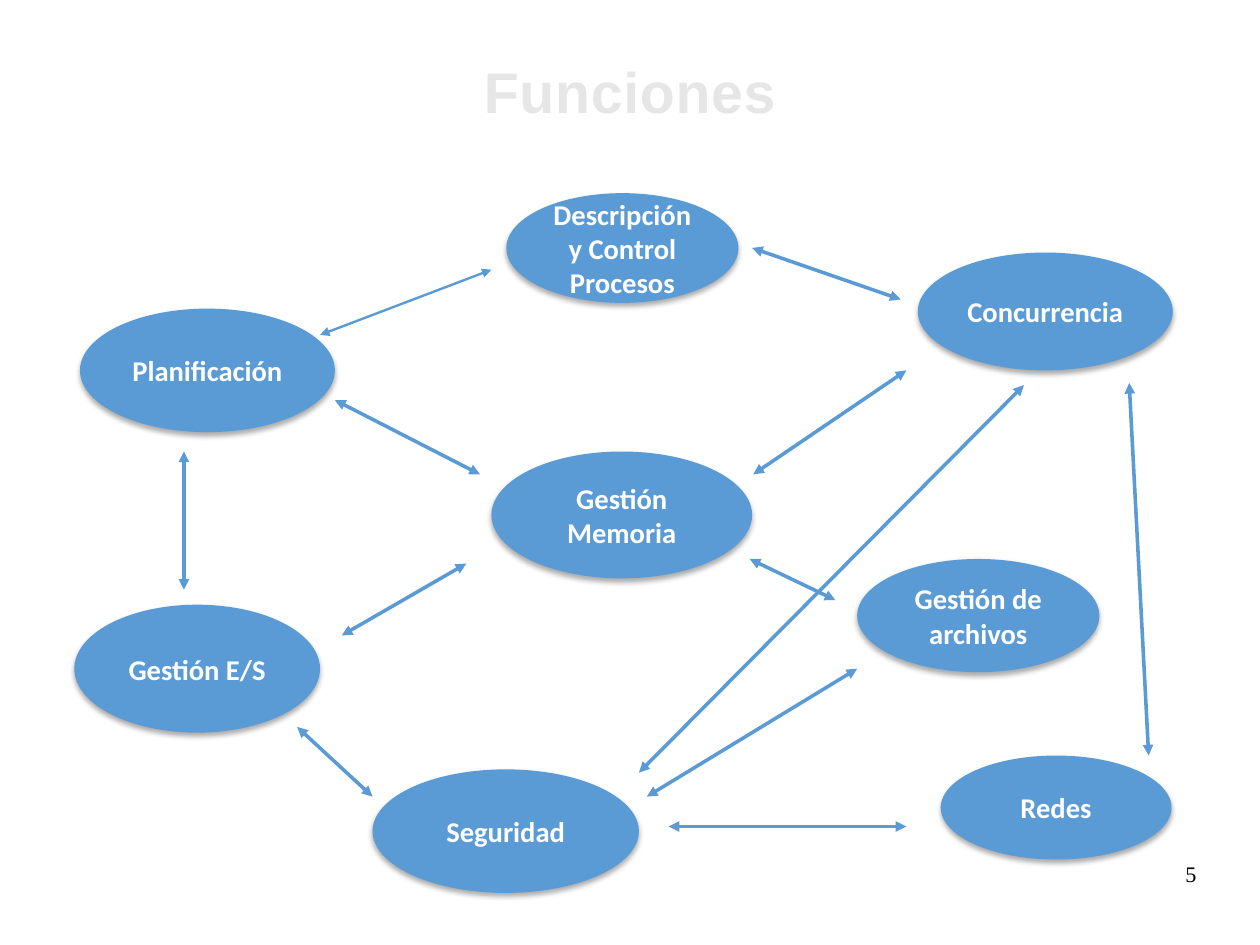
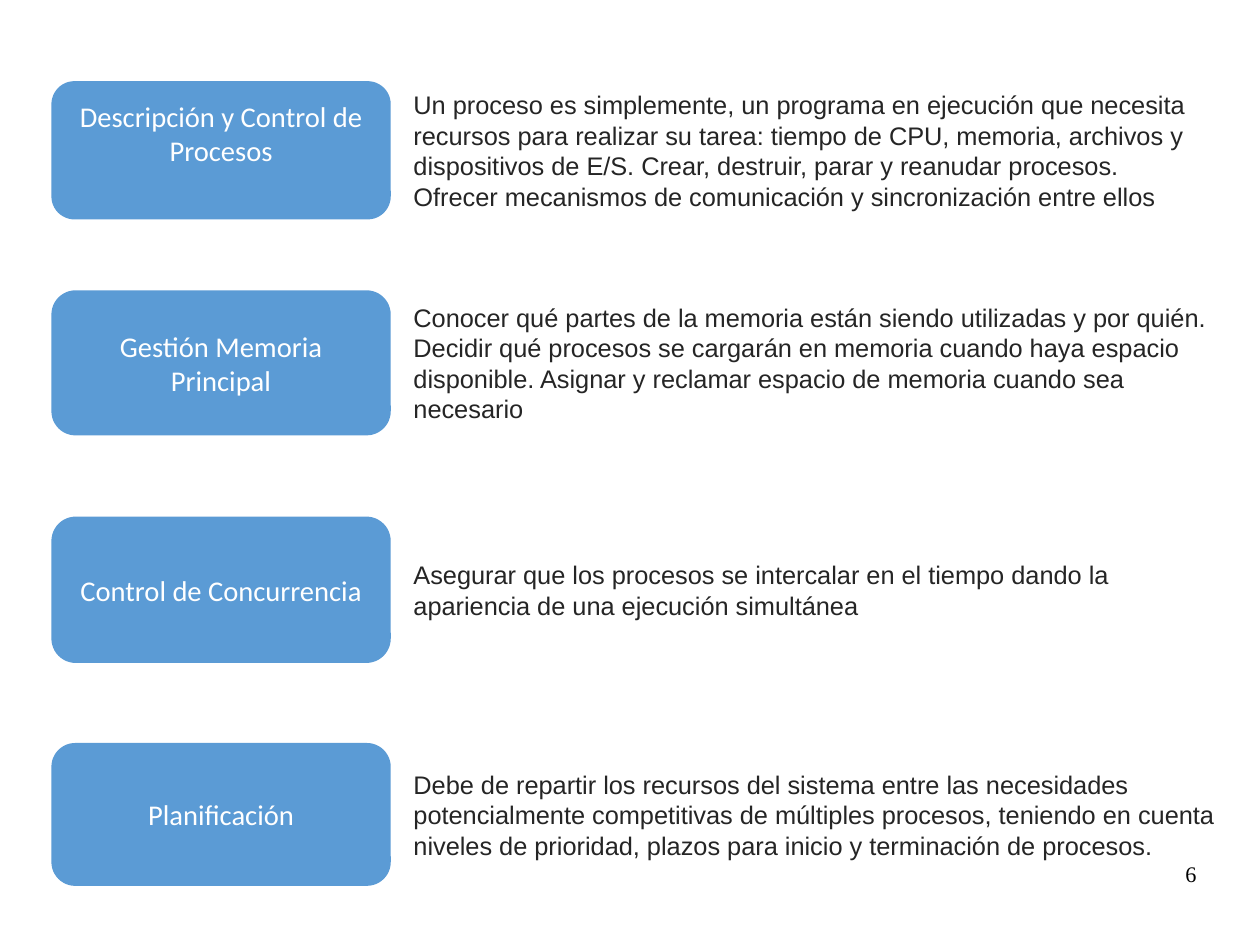
"""Build two slides on the functions of an operating system."""
from typing import NamedTuple

from lxml import etree
from pptx import Presentation
from pptx.dml.color import RGBColor
from pptx.enum import shapes as sh, text as tx
from pptx.oxml import ns
from pptx.util import Pt

BLUE, WHITE, BLACK, DARK, PALE = "5B9BD5", "FFFFFF", "000000", "252525", "E6E6E6"
WIDE, HIGH = 793.75, 595.25


class Box(NamedTuple):
    left: float
    top: float
    wide: float
    high: float


class Font(NamedTuple):
    name: str
    size: float
    tint: str
    bold: bool = False


class Node(NamedTuple):
    label: str
    box: Box


class Link(NamedTuple):
    x1: float
    y1: float
    x2: float
    y2: float
    width: float = 2.25


class Row(NamedTuple):
    label: str
    note: str
    top: float
    high: float
    wide: float = 523.5
    foot: float = 3.6


HEAD = Font("Arial", 36, PALE, True)
BOLD = Font("Calibri", 18, WHITE, True)
PLAIN = Font("Calibri", 18, WHITE)
NOTE = Font("Arial", 16, DARK)
PAGE = Font("Times New Roman", 14, BLACK)

NODES = [
    Node("Planificación", Box(50.4, 194.4, 160.6, 77.8)),
    Node("Descripción y Control Procesos", Box(319, 121.7, 146.2, 69.1)),
    Node("Concurrencia", Box(578.2, 159.1, 160.6, 74.2)),
    Node("Gestión de archivos", Box(540, 352.1, 152.6, 71.3)),
    Node("Redes", Box(592.6, 475.9, 145.4, 65.5)),
    Node("Seguridad", Box(234.7, 484.6, 167.8, 77.8)),
    Node("Gestión Memoria", Box(309.6, 284.4, 164.2, 79.9)),
    Node("Gestión E/S", Box(46.8, 380.9, 154.8, 80.6)),
]

LINKS = [
    Link(201.6, 211, 309.6, 169.9, 1.5),
    Link(115.9, 284.4, 115.9, 371.5),
    Link(187.2, 457.9, 234.7, 501.8),
    Link(215.3, 400.3, 293.8, 355),
    Link(302.4, 298.8, 211, 252),
    Link(473.8, 156.2, 567.4, 188.6),
    Link(474.5, 298.8, 571, 233.3),
    Link(421.2, 520.6, 571, 520.6),
    Link(723.6, 475.9, 711.4, 241.2),
    Link(407.5, 501.8, 540, 421.2),
    Link(472.3, 352.1, 526.3, 378),
    Link(402.5, 486.7, 645.1, 242.6),
]

ROWS = [
    Row("Descripción y Control de Procesos",
        "Un proceso es simplemente, un programa en ejecución que necesita recursos "
        "para realizar su tarea: tiempo de CPU, memoria, archivos y dispositivos de "
        "E/S. Crear, destruir, parar y reanudar procesos. Ofrecer mecanismos de "
        "comunicación y sincronización entre ellos", 51.1, 87.1, 507.6, 25.2),
    Row("Gestión Memoria Principal",
        "Conocer qué partes de la memoria están siendo utilizadas y por quién. "
        "Decidir qué procesos se cargarán en memoria cuando haya espacio disponible. "
        "Asignar y reclamar espacio de memoria cuando sea necesario", 182.9, 91.4),
    Row("Control de Concurrencia",
        "Asegurar que los procesos se intercalar en el tiempo dando la apariencia "
        "de una ejecución simultánea", 325.4, 92.2),
    Row("Planificación",
        "Debe de repartir los recursos del sistema entre las necesidades "
        "potencialmente competitivas de múltiples procesos, teniendo en cuenta "
        "niveles de prioridad, plazos para inicio y terminación de procesos.",
        468, 90),
]


def paint(hue: str) -> RGBColor:
    """Turn a hex string into a colour."""
    return RGBColor.from_string(hue)


def place(box: Box) -> list:
    """Give the box as lengths."""
    return [Pt(side) for side in box]


def write(frame, words: str, font: Font, align=tx.PP_ALIGN.LEFT,
          anchor=tx.MSO_ANCHOR.MIDDLE):
    """Write one run in a frame and return it."""
    frame.word_wrap = True
    frame.vertical_anchor = anchor
    para = frame.paragraphs[0]
    para.alignment = align
    run = para.add_run()
    run.text = words
    run.font.name, run.font.size, run.font.bold = font.name, Pt(font.size), font.bold
    run.font.color.rgb = paint(font.tint)
    return run


def block(slide, kind, box: Box, words: str, font: Font):
    """Draw a filled shape with a centred label."""
    shape = slide.shapes.add_shape(kind, *place(box))
    shape.shadow.inherit = False
    shape.fill.solid()
    shape.fill.fore_color.rgb = paint(BLUE)
    shape.line.fill.background()
    write(shape.text_frame, words, font, tx.PP_ALIGN.CENTER)
    return shape


def shade(shape) -> None:
    """Add a soft shadow below a shape."""
    glow = shape._element.spPr.find(ns.qn("a:effectLst"))
    drop = etree.SubElement(glow, ns.qn("a:outerShdw"), blurRad=str(Pt(3.5)),
                            dist=str(Pt(2.2)), dir="5400000", rotWithShape="0")
    tint = etree.SubElement(drop, ns.qn("a:srgbClr"), val=BLACK)
    etree.SubElement(tint, ns.qn("a:alpha"), val="32000")


def join(slide, link: Link) -> None:
    """Draw a line with an arrowhead at both ends."""
    ends = [Pt(spot) for spot in link[:4]]
    line = slide.shapes.add_connector(sh.MSO_CONNECTOR.STRAIGHT, *ends)
    line.line.color.rgb = paint(BLUE)
    line.line.width = Pt(link.width)
    edge = line._element.spPr.find(ns.qn("a:ln"))
    for tip in ("a:headEnd", "a:tailEnd"):
        etree.SubElement(edge, ns.qn(tip), type="triangle")
    etree.SubElement(line._element.spPr, ns.qn("a:effectLst"))


def number(slide, page: int) -> None:
    """Write the page number."""
    frame = slide.shapes.add_textbox(*place(Box(568.8, 542.2, 185, 41))).text_frame
    frame.margin_left = frame.margin_right = frame.margin_top = frame.margin_bottom = 0
    write(frame, str(page), PAGE, tx.PP_ALIGN.RIGHT, tx.MSO_ANCHOR.TOP)


def title(slide, words: str) -> None:
    """Fill and place the title."""
    head = slide.shapes.title
    head.left, head.top, head.width, head.height = place(Box(60, 33.2, WIDE - 120, 48))
    run = write(head.text_frame, words, HEAD, tx.PP_ALIGN.CENTER)
    run.font._element.set("spc", "50")


def web(deck) -> None:
    """Build the slide of linked functions."""
    slide = deck.slides.add_slide(deck.slide_layouts[5])
    title(slide, "Funciones")
    for node in NODES:
        shade(block(slide, sh.MSO_SHAPE.OVAL, node.box, node.label, BOLD))
    for link in LINKS:
        join(slide, link)
    number(slide, 5)


def rows(deck) -> None:
    """Build the slide that explains the functions."""
    slide = deck.slides.add_slide(deck.slide_layouts[6])
    for row in ROWS:
        tag = block(slide, sh.MSO_SHAPE.ROUNDED_RECTANGLE,
                    Box(32.4, row.top, 213.8, row.high), row.label, PLAIN)
        tag.text_frame.margin_bottom = Pt(row.foot)
        note = slide.shapes.add_textbox(
            *place(Box(253.4, row.top, row.wide, row.high)))
        write(note.text_frame, row.note, NOTE)
    number(slide, 6)


def main() -> None:
    """Build and save the deck."""
    deck = Presentation()
    deck.slide_width, deck.slide_height = Pt(WIDE), Pt(HIGH)
    web(deck)
    rows(deck)
    deck.save("out.pptx")


if __name__ == "__main__":
    main()
